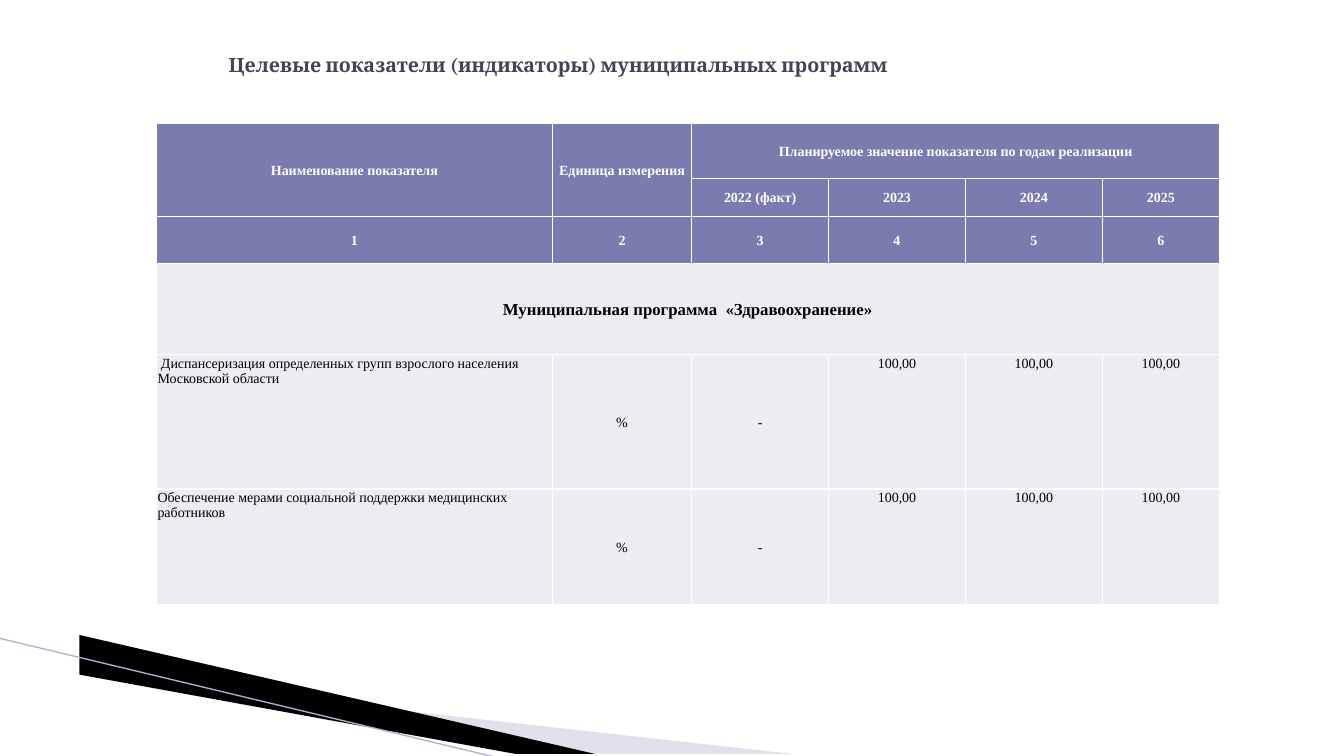
"""Build a slide with the target indicators of a municipal health programme."""
from dataclasses import dataclass

from lxml import etree
from pptx import Presentation
from pptx.dml.color import RGBColor
from pptx.enum.shapes import MSO_CONNECTOR
from pptx.enum.text import MSO_ANCHOR, PP_ALIGN
from pptx.oxml.ns import qn
from pptx.util import Cm, Pt

STRAIGHT = MSO_CONNECTOR.STRAIGHT
TOP, MIDDLE = MSO_ANCHOR.TOP, MSO_ANCHOR.MIDDLE
LEFT, CENTER = PP_ALIGN.LEFT, PP_ALIGN.CENTER


@dataclass(frozen=True)
class Theme:
    title_font: str = "Cambria"
    table_font: str = "Times New Roman"
    title_size: int = 14
    section_size: int = 12
    cell_size: int = 10
    title: str = "424456"
    header: str = "7A7BAE"
    body: str = "ECECF2"
    white: str = "FFFFFF"
    black: str = "000000"
    wedge: str = "B6B6D1"
    line: str = "AFB0CC"


class SlideBuilder:
    def __init__(self, slide, theme):
        self.s = slide
        self.theme = theme

    def font(self, p, name, size, color, bold):
        for r in p.runs:
            r.font.name = name
            r.font.size = Pt(size)
            r.font.bold = bold
            r.font.color.rgb = RGBColor.from_string(color)

    def title(self, text, x, y, w, h):
        sp = self.s.shapes.title
        sp.left, sp.top, sp.width, sp.height = Cm(x), Cm(y), Cm(w), Cm(h)
        tf = sp.text_frame
        tf.text = text
        tf.vertical_anchor = MIDDLE
        p = tf.paragraphs[0]
        p.alignment = LEFT
        self.font(p, self.theme.title_font, self.theme.title_size, self.theme.title, True)

    def wedge(self, points, color, opacity=100):
        builder = self.s.shapes.build_freeform(*points[0], scale=Cm(1))
        builder.add_line_segments(points[1:], close=True)
        sp = builder.convert_to_shape()
        sp.shadow.inherit = False
        sp.fill.solid()
        sp.fill.fore_color.rgb = RGBColor.from_string(color)
        sp.line.fill.background()
        if opacity < 100:
            clr = sp.fill._xPr.find(".//" + qn("a:srgbClr"))
            etree.SubElement(clr, qn("a:alpha"), val=str(opacity * 1000))

    def line(self, x1, y1, x2, y2, color, width):
        cxn = self.s.shapes.add_connector(STRAIGHT, Cm(x1), Cm(y1), Cm(x2), Cm(y2))
        cxn.line.color.rgb = RGBColor.from_string(color)
        cxn.line.width = Pt(width)
        etree.SubElement(cxn._element.spPr, qn("a:effectLst"))

    def borders(self, cell, color, width):
        tc_pr = cell._tc.get_or_add_tcPr()
        for side in ("lnL", "lnR", "lnT", "lnB"):
            ln = etree.SubElement(tc_pr, qn("a:" + side), w=str(Pt(width)))
            fill = etree.SubElement(ln, qn("a:solidFill"))
            etree.SubElement(fill, qn("a:srgbClr"), val=color)

    def cell(self, cell, text, fill, color, size, bold, align, anchor):
        self.borders(cell, self.theme.white, 1)
        cell.fill.solid()
        cell.fill.fore_color.rgb = RGBColor.from_string(fill)
        cell.margin_left = cell.margin_right = cell.margin_top = Cm(0.03)
        cell.margin_bottom = 0
        cell.vertical_anchor = anchor
        cell.text = text
        p = cell.text_frame.paragraphs[0]
        p.alignment = align
        self.font(p, self.theme.table_font, size, color, bold)

    def table(self, x, y, widths, heights, rows, merges, header_rows, section_row):
        t = self.theme
        table = self.s.shapes.add_table(
            len(heights), len(widths), Cm(x), Cm(y), Cm(sum(widths)), Cm(sum(heights))
        ).table
        for column, w in zip(table.columns, widths):
            column.width = Cm(w)
        for row, h in zip(table.rows, heights):
            row.height = Cm(h)
        for i, row in enumerate(rows):
            for j, text in enumerate(row):
                if i < header_rows:
                    style = t.header, t.white, t.cell_size, True, CENTER, MIDDLE
                elif i == section_row:
                    style = t.body, t.black, t.section_size, True, CENTER, MIDDLE
                else:
                    align = LEFT if j == 0 else CENTER
                    anchor = MIDDLE if j in (1, 2) else TOP
                    style = t.body, t.black, t.cell_size, False, align, anchor
                self.cell(table.cell(i, j), text, *style)
        for first, last in merges:
            table.cell(*first).merge(table.cell(*last))


def main():
    theme = Theme()
    prs = Presentation()
    prs.slide_width, prs.slide_height = Cm(33.87), Cm(19.05)
    b = SlideBuilder(prs.slides.add_slide(prs.slide_layouts[5]), theme)

    b.wedge([(1.85, 16.54), (20.14, 19.08), (15.44, 19.08), (1.85, 16.51)], theme.wedge, 40)
    b.wedge([(1.8, 16.48), (15.47, 19.08), (12.6, 19.1), (1.83, 16.51)], theme.black)
    b.line(-0.03, 16.08, 12.57, 19.1, theme.line, 0.95)
    b.title("Целевые показатели (индикаторы) муниципальных программ", 5.51, 0.76, 22.86, 1.75)

    values = ["%", "-"] + ["100,00"] * 3
    rows = [
        ["Наименование показателя", "Единица измерения",
         "Планируемое значение показателя по годам реализации", "", "", ""],
        ["", "", "2022 (факт)", "2023", "2024", "2025"],
        [str(n) for n in range(1, 7)],
        ["Муниципальная программа  «Здравоохранение»"] + [""] * 5,
        [" Диспансеризация определенных групп взрослого населения Московской области"] + values,
        ["Обеспечение мерами социальной поддержки медицинских работников"] + values,
    ]
    b.table(
        3.94, 3.12,
        widths=[9.98, 3.51, 3.45, 3.45, 3.45, 2.95],
        heights=[1.37, 0.97, 1.17, 2.31, 3.38, 2.92],
        rows=rows,
        merges=[((0, 0), (1, 0)), ((0, 1), (1, 1)), ((0, 2), (0, 5)), ((3, 0), (3, 5))],
        header_rows=3,
        section_row=3,
    )
    prs.save("out.pptx")


if __name__ == "__main__":
    main()
